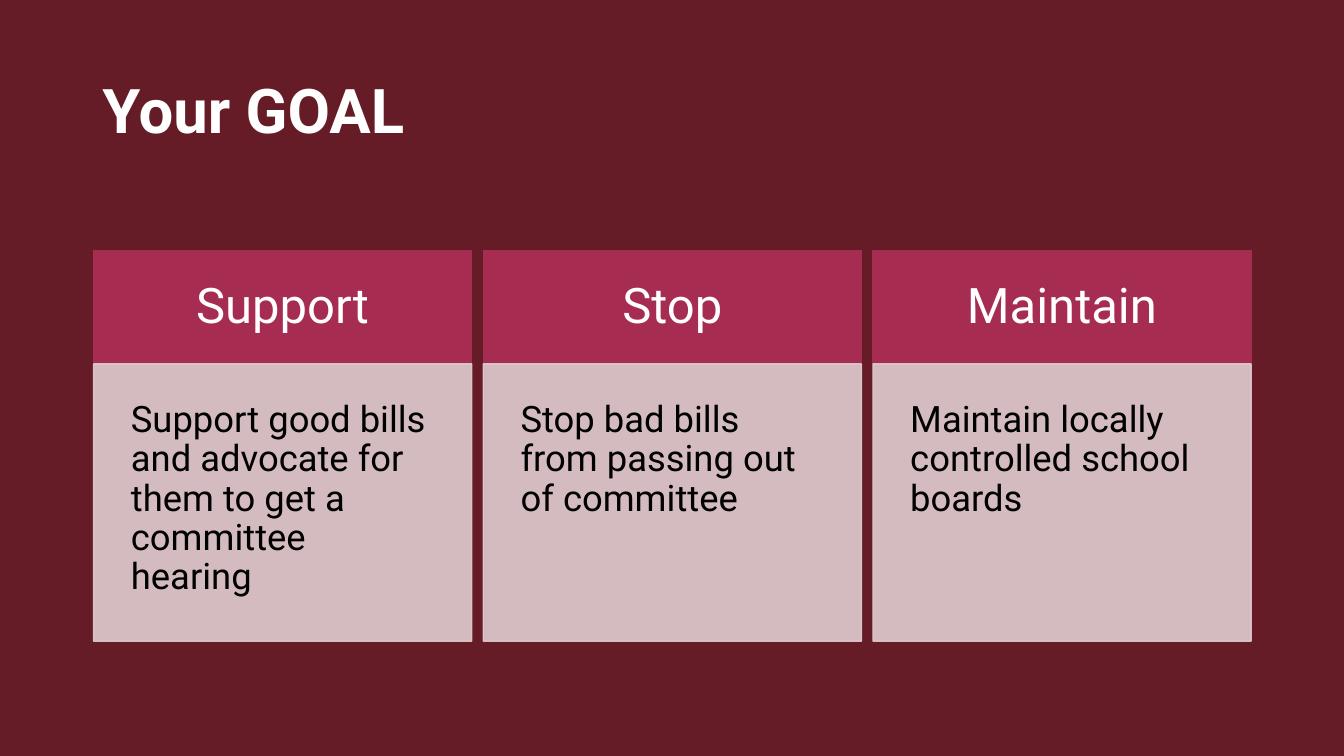
from dataclasses import dataclass

from lxml.etree import SubElement
from pptx import Presentation
from pptx.dml.color import RGBColor
from pptx.enum.shapes import MSO_SHAPE
from pptx.enum.text import MSO_ANCHOR, MSO_AUTO_SIZE, PP_ALIGN
from pptx.oxml.ns import qn
from pptx.util import Cm, Pt


@dataclass(frozen=True)
class Theme:
    font: str = "Roboto"
    background: str = "651C27"
    header: str = "A62C52"
    panel: str = "E1CDD1"
    light: str = "FFFFFF"
    dark: str = "000000"
    title_size: int = 44
    header_size: int = 35
    body_size: int = 26


GOALS = [
    ("Support", "Support good bills and advocate for them to get a committee hearing"),
    ("Stop", "Stop bad bills from passing out of committee"),
    ("Maintain", "Maintain locally controlled school boards"),
]

COLUMN_LEFT, COLUMN_WIDTH, COLUMN_PITCH = 2.36, 9.53, 9.82
HEADER_TOP, HEADER_HEIGHT, PANEL_HEIGHT = 6.32, 2.85, 6.99


def write_text(frame, text, *, font, size, color, bold=False, align=PP_ALIGN.LEFT,
               anchor=MSO_ANCHOR.TOP, inset=0.25, line_spacing=0.9):
    frame.word_wrap = True
    frame.auto_size = MSO_AUTO_SIZE.NONE
    frame.vertical_anchor = anchor
    frame.margin_left = frame.margin_right = Cm(inset)
    frame.margin_top = frame.margin_bottom = Cm(inset)
    paragraph = frame.paragraphs[0]
    paragraph.alignment = align
    paragraph.line_spacing = line_spacing
    run = paragraph.add_run()
    run.text = text
    run.font.name = font
    run.font.size = Pt(size)
    run.font.bold = bold
    run.font.color.rgb = RGBColor.from_string(color)


class GoalSlide:
    def __init__(self, presentation, theme):
        self.theme = theme
        self.slide = presentation.slides.add_slide(presentation.slide_layouts[5])
        backdrop = self.slide.background.fill
        backdrop.solid()
        backdrop.fore_color.rgb = RGBColor.from_string(theme.background)

    def title(self, text):
        heading = self.slide.shapes.title
        heading.left, heading.top = Cm(2.33), Cm(1.01)
        heading.width, heading.height = Cm(29.21), Cm(3.68)
        write_text(heading.text_frame, text, font=self.theme.font,
                   size=self.theme.title_size, color=self.theme.light,
                   bold=True, anchor=MSO_ANCHOR.MIDDLE)

    def block(self, left, top, height, fill_color, text, opacity=100, **text_format):
        """Add a filled rectangle, in centimetres, that carries its own text."""
        block = self.slide.shapes.add_shape(
            MSO_SHAPE.RECTANGLE, Cm(left), Cm(top), Cm(COLUMN_WIDTH), Cm(height))
        block.shadow.inherit = False
        block.fill.solid()
        block.fill.fore_color.rgb = RGBColor.from_string(fill_color)
        block.line.color.rgb = RGBColor.from_string(fill_color)
        block.line.width = Pt(1)
        if opacity < 100:
            for tint in block.element.spPr.findall(".//" + qn("a:srgbClr")):
                SubElement(tint, qn("a:alpha"), val=str(opacity * 1000))
        write_text(block.text_frame, text, font=self.theme.font, **text_format)

    def column(self, left, heading, goal):
        theme = self.theme
        self.block(left, HEADER_TOP, HEADER_HEIGHT, theme.header, heading,
                   size=theme.header_size, color=theme.light, inset=0.76,
                   align=PP_ALIGN.CENTER, anchor=MSO_ANCHOR.MIDDLE)
        self.block(left, HEADER_TOP + HEADER_HEIGHT, PANEL_HEIGHT, theme.panel, goal,
                   opacity=90, size=theme.body_size, color=theme.dark, inset=0.94)


def main():
    presentation = Presentation()
    presentation.slide_width, presentation.slide_height = Cm(33.87), Cm(19.05)
    goal_slide = GoalSlide(presentation, Theme())
    goal_slide.title("Your GOAL")
    for index, (heading, goal) in enumerate(GOALS):
        goal_slide.column(COLUMN_LEFT + index * COLUMN_PITCH, heading, goal)
    presentation.save("out.pptx")


if __name__ == "__main__":
    main()
